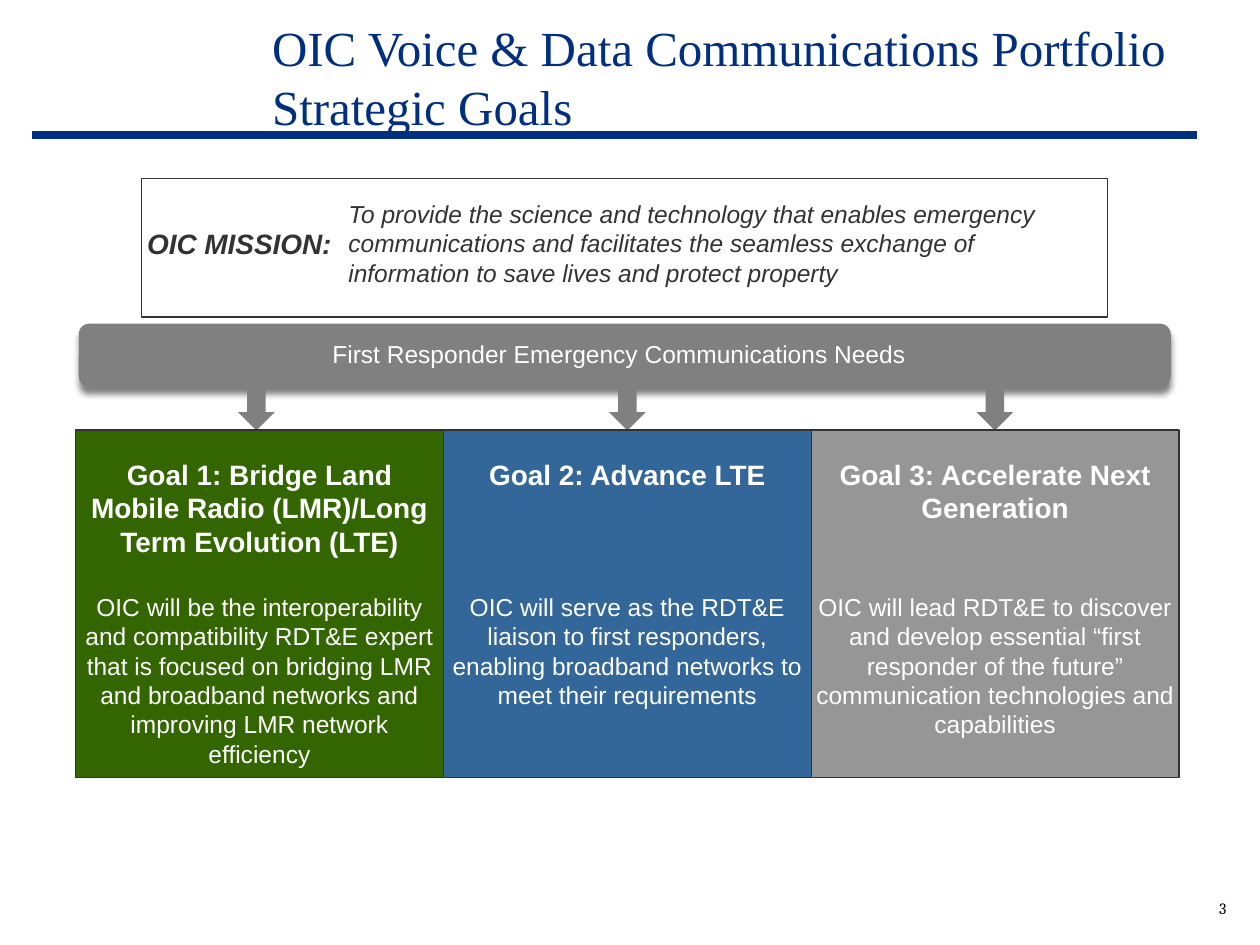
from dataclasses import dataclass

import lxml.etree
import pptx
import pptx.dml.color
import pptx.enum.shapes
import pptx.enum.text
import pptx.oxml
import pptx.oxml.ns
import pptx.util

Pt = pptx.util.Pt
RGBColor = pptx.dml.color.RGBColor
Shapes = pptx.enum.shapes.MSO_SHAPE
Align = pptx.enum.text.PP_ALIGN
Anchor = pptx.enum.text.MSO_ANCHOR
AutoSize = pptx.enum.text.MSO_AUTO_SIZE

NAVY = RGBColor(0x00, 0x2F, 0x80)
DARK = RGBColor(0x33, 0x33, 0x33)
GRAY = RGBColor(0x80, 0x80, 0x80)
LIGHT_GRAY = RGBColor(0x96, 0x96, 0x96)
GREEN = RGBColor(0x33, 0x66, 0x00)
BLUE = RGBColor(0x33, 0x66, 0x99)
WHITE = RGBColor(0xFF, 0xFF, 0xFF)
BLACK = RGBColor(0x00, 0x00, 0x00)

LINE_HEIGHT = 1.2  # line pitch relative to font size
HEADING_SIZE, BODY_SIZE = 16, 14
HEADING_ROWS = 4  # rows reserved above each goal's body text
CARD_LEFT, CARD_TOP, CARD_WIDTH, CARD_HEIGHT = 43.2, 245.7, 210.2, 198.6
TEXT_OVERHANG = 5  # goal text boxes reach past their cards on both sides


@dataclass
class Goal:
    heading: str
    heading_rows: int
    body: str
    text_height: float
    fill: RGBColor
    arrow_left: float


GOALS = [
    Goal("Goal 1: Bridge Land Mobile Radio (LMR)/Long Term Evolution (LTE)", 3,
         "OIC will be the interoperability and compatibility RDT&E expert that is "
         "focused on bridging LMR and broadband networks and improving LMR network "
         "efficiency", 186.5, GREEN, 136),
    Goal("Goal 2: Advance LTE", 1,
         "OIC will serve as the RDT&E liaison to first responders, enabling "
         "broadband networks to meet their requirements", 152.6, BLUE, 348),
    Goal("Goal 3: Accelerate Next Generation", 2,
         "OIC will lead RDT&E to discover and develop essential “first responder of "
         "the future” communication technologies and capabilities",
         169.9, LIGHT_GRAY, 558),
]


def write(paragraph, text: str, *, size: float, color: RGBColor, font: str = "Arial",
          bold: bool = False, italic: bool = False, align=Align.LEFT,
          space_before: float = 0) -> None:
    paragraph.alignment = align
    paragraph.line_spacing = Pt(size * LINE_HEIGHT)
    paragraph.space_before = Pt(space_before)
    run = paragraph.add_run()
    run.text = text
    run.font.name = font
    run.font.size = Pt(size)
    run.font.bold = bold
    run.font.italic = italic
    run.font.color.rgb = color


def add_text_frame(slide, left: float, top: float, width: float, height: float,
                   wrap: bool = True):
    box = slide.shapes.add_textbox(Pt(left), Pt(top), Pt(width), Pt(height))
    frame = box.text_frame
    frame.word_wrap = wrap
    frame.auto_size = AutoSize.SHAPE_TO_FIT_TEXT
    return frame


def add_block(slide, kind, left: float, top: float, width: float, height: float,
              fill: RGBColor | None = None, line: RGBColor | None = None):
    shape = slide.shapes.add_shape(kind, Pt(left), Pt(top), Pt(width), Pt(height))
    shape.shadow.inherit = False
    if fill is None:
        shape.fill.background()
    else:
        shape.fill.solid()
        shape.fill.fore_color.rgb = fill
    if line is None:
        shape.line.fill.background()
    else:
        shape.line.color.rgb = line
        shape.line.width = Pt(0.75)
    return shape


def add_drop_shadow(shape, color: RGBColor, blur: float, distance: float) -> None:
    effects = shape._element.spPr.find(pptx.oxml.ns.qn("a:effectLst"))
    effects.append(pptx.oxml.parse_xml(
        f'<a:outerShdw {pptx.oxml.ns.nsdecls("a")} blurRad="{Pt(blur)}" '
        f'dist="{Pt(distance)}" dir="5400000" algn="t" rotWithShape="0">'
        f'<a:srgbClr val="{color}"/></a:outerShdw>'))


def add_rule(slide, left: float, right: float, top: float) -> None:
    rule = slide.shapes.add_connector(pptx.enum.shapes.MSO_CONNECTOR.STRAIGHT,
                                      Pt(left), Pt(top), Pt(right), Pt(top))
    rule.line.color.rgb = NAVY
    rule.line.width = Pt(3)
    lxml.etree.SubElement(rule._element.spPr, pptx.oxml.ns.qn("a:effectLst"))


def add_title(slide, text: str) -> None:
    title = slide.shapes.title
    title.left, title.top, title.width, title.height = Pt(148.3), Pt(21.6), Pt(534.2), Pt(43.9)
    frame = title.text_frame
    frame.word_wrap = True
    frame.auto_size = AutoSize.NONE
    frame.vertical_anchor = Anchor.MIDDLE
    write(frame.paragraphs[0], text, size=28, color=NAVY, font="Times New Roman")


def add_goal(slide, index: int, goal: Goal) -> None:
    left = CARD_LEFT + index * CARD_WIDTH
    add_block(slide, Shapes.RECTANGLE, left, CARD_TOP, CARD_WIDTH, CARD_HEIGHT,
              goal.fill, DARK)
    frame = add_text_frame(slide, left - TEXT_OVERHANG, 257.8,
                           CARD_WIDTH + 2 * TEXT_OVERHANG, goal.text_height)
    write(frame.paragraphs[0], goal.heading, size=HEADING_SIZE, color=WHITE,
          bold=True, align=Align.CENTER)
    gap = (HEADING_ROWS - goal.heading_rows) * HEADING_SIZE * LINE_HEIGHT
    write(frame.add_paragraph(), goal.body, size=BODY_SIZE, color=WHITE,
          align=Align.CENTER, space_before=gap)


def main() -> None:
    presentation = pptx.Presentation()
    presentation.slide_width, presentation.slide_height = Pt(720), Pt(540)
    slide = presentation.slides.add_slide(presentation.slide_layouts[5])

    # Title, double rule and page number
    add_title(slide, "OIC Voice & Data Communications Portfolio Strategic Goals")
    for top in (76.3, 77.8):
        add_rule(slide, 18, 684, top)
    number = add_text_frame(slide, 666, 509.8, 41.8, 18)
    number.vertical_anchor = Anchor.BOTTOM
    write(number.paragraphs[0], "3", size=9, color=BLACK, font="Cambria", align=Align.RIGHT)

    # Mission
    add_block(slide, Shapes.RECTANGLE, 80.8, 102, 552, 79.2, line=DARK)
    label = add_text_frame(slide, 77, 126, 121.7, 26.6, wrap=False)
    write(label.paragraphs[0], "OIC MISSION:", size=HEADING_SIZE, color=DARK,
          bold=True, italic=True)
    mission = add_text_frame(slide, 192, 110.2, 440, 58.3)
    write(mission.paragraphs[0],
          "To provide the science and technology that enables emergency communications "
          "and facilitates the seamless exchange of information to save lives and "
          "protect property", size=BODY_SIZE, color=DARK, italic=True)

    # Needs banner and arrows
    banner = add_block(slide, Shapes.ROUNDED_RECTANGLE, 45, 185, 624, 36, GRAY)
    add_drop_shadow(banner, GRAY, blur=4, distance=4)
    needs = add_text_frame(slide, 182.9, 190.1, 347.8, 24.2)
    write(needs.paragraphs[0], "First Responder Emergency Communications Needs",
          size=BODY_SIZE, color=WHITE)
    for goal in GOALS:
        add_block(slide, Shapes.DOWN_ARROW, goal.arrow_left, 222, 21, 24, GRAY)

    # Goals
    for index, goal in enumerate(GOALS):
        add_goal(slide, index, goal)

    presentation.save("out.pptx")


if __name__ == "__main__":
    main()
